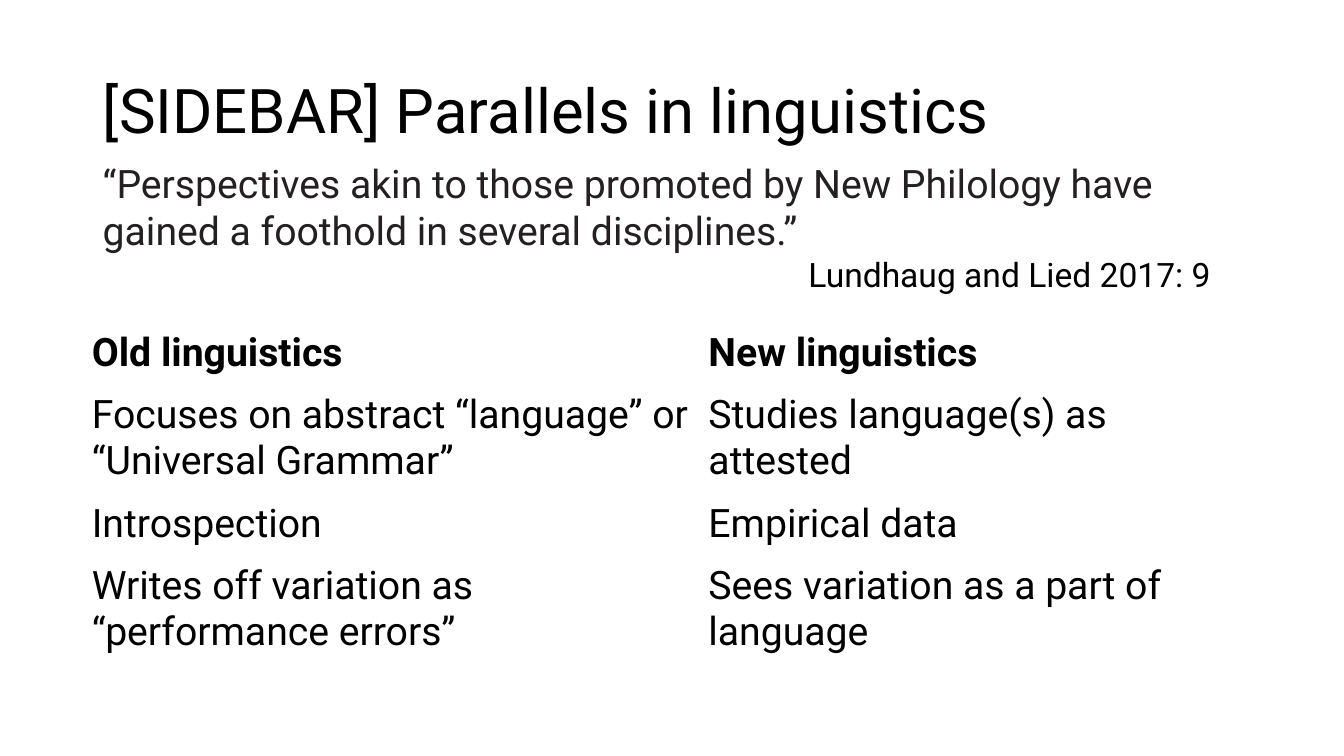
from dataclasses import dataclass

from pptx import Presentation
from pptx.dml.color import RGBColor
from pptx.enum.text import MSO_ANCHOR, MSO_AUTO_SIZE, PP_ALIGN
from pptx.util import Cm, Pt

LEFT, RIGHT = PP_ALIGN.LEFT, PP_ALIGN.RIGHT
MIDDLE = MSO_ANCHOR.MIDDLE
NO_AUTOFIT = MSO_AUTO_SIZE.NONE
TITLE_ONLY = 5


@dataclass(frozen=True)
class Theme:
    font: str = "Roboto"
    ink: RGBColor = RGBColor(0x00, 0x00, 0x00)
    quote_ink: RGBColor = RGBColor(0x24, 0x20, 0x21)
    paper: RGBColor = RGBColor(0xFF, 0xFF, 0xFF)
    title_size: Pt = Pt(44)
    text_size: Pt = Pt(28)
    citation_size: Pt = Pt(24)


THEME = Theme()

TITLE = "[SIDEBAR] Parallels in linguistics"
QUOTE = ("“Perspectives akin to those promoted by New Philology have "
         "gained a foothold in several disciplines.”")
CITATION = "Lundhaug and Lied 2017: 9"
COMPARISON = [
    ("Old linguistics", "New linguistics"),
    ("Focuses on abstract “language” or “Universal Grammar”",
     "Studies language(s) as attested"),
    ("Introspection", "Empirical data"),
    ("Writes off variation as “performance errors”",
     "Sees variation as a part of language"),
]
COLUMN_WIDTHS = (Cm(15.54), Cm(14.2))
ROW_HEIGHTS = (Cm(1.68), Cm(2.57)) * 2


def write(paragraph, text, size, color=THEME.ink, bold=False, align=LEFT):
    paragraph.alignment = align
    run = paragraph.add_run()
    run.text = text
    run.font.color.rgb = color
    for name, value in {"name": THEME.font, "size": size, "bold": bold}.items():
        setattr(run.font, name, value)


def place_title(slide, left, top, width, height):
    title = slide.shapes.title
    box = {"left": left, "top": top, "width": width, "height": height}
    for name, value in box.items():
        setattr(title, name, value)
    frame = title.text_frame
    frame.auto_size = NO_AUTOFIT
    frame.vertical_anchor = MIDDLE
    paragraph = frame.paragraphs[0]
    paragraph.line_spacing = 0.9
    write(paragraph, TITLE, THEME.title_size)


def place_quote(slide, left, top, width, height):
    frame = slide.shapes.add_textbox(left, top, width, height).text_frame
    frame.word_wrap = True
    frame.margin_right = Cm(1.6)
    write(frame.paragraphs[0], QUOTE, THEME.text_size, THEME.quote_ink)
    write(frame.add_paragraph(), CITATION, THEME.citation_size, align=RIGHT)


def place_comparison(slide, left, top, width, height):
    table = slide.shapes.add_table(
        len(COMPARISON), len(COLUMN_WIDTHS), left, top, width, height).table
    table.horz_banding = False
    for column, column_width in zip(table.columns, COLUMN_WIDTHS):
        column.width = column_width
    for row, row_height in zip(table.rows, ROW_HEIGHTS):
        row.height = row_height
    for row_index, texts in enumerate(COMPARISON):
        for column_index, text in enumerate(texts):
            cell = table.cell(row_index, column_index)
            cell.fill.solid()
            cell.fill.fore_color.rgb = THEME.paper
            cell.vertical_anchor = MIDDLE
            write(cell.text_frame.paragraphs[0], text, THEME.text_size,
                  bold=row_index == 0)


def main():
    presentation = Presentation()
    presentation.slide_width = Cm(33.87)
    presentation.slide_height = Cm(19.05)
    slide = presentation.slides.add_slide(presentation.slide_layouts[TITLE_ONLY])

    # Heading
    place_title(slide, Cm(2.34), Cm(1.02), Cm(29.21), Cm(3.68))
    # Quotation with its source
    place_quote(slide, Cm(2.34), Cm(3.89), Cm(29.77), Cm(3.84))
    # Old and new side by side
    place_comparison(slide, Cm(2.06), Cm(8.05),
                     sum(COLUMN_WIDTHS), sum(ROW_HEIGHTS))

    presentation.save("out.pptx")


if __name__ == "__main__":
    main()
